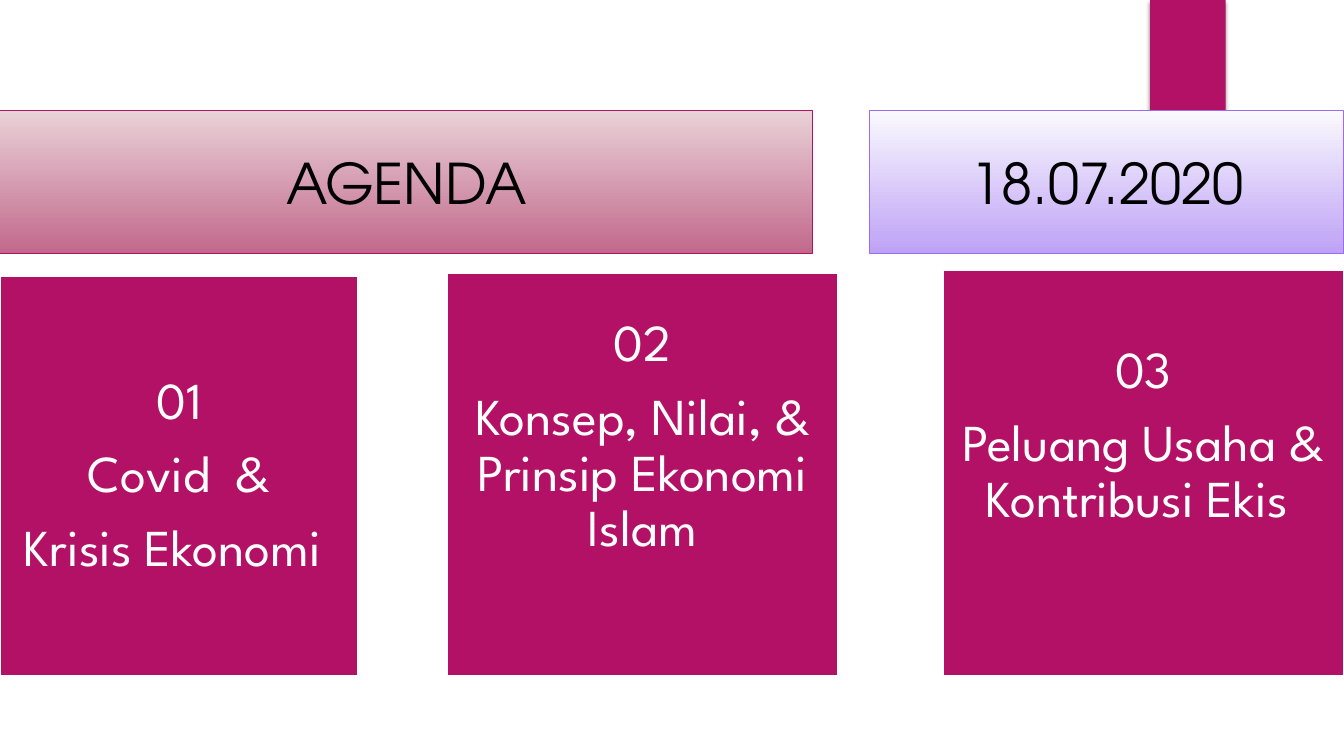
from dataclasses import dataclass

from lxml.etree import SubElement
from pptx import Presentation
from pptx.dml.color import RGBColor
from pptx.enum.shapes import MSO_SHAPE
from pptx.enum.text import MSO_ANCHOR, PP_ALIGN
from pptx.oxml.ns import qn
from pptx.util import Pt


@dataclass(frozen=True)
class Theme:
    magenta: str = "B31166"
    violet: str = "9B6BF2"
    white: str = "FFFFFF"
    black: str = "000000"
    rose_gradient: tuple = ("E9D1D8", "C2698B")
    violet_gradient: tuple = ("FAF9FE", "BEA2F6")
    band_font: str = "TeX Gyre Adventor"
    card_font: str = "League Spartan"
    band_size: float = 40
    card_size: float = 37


class AgendaSlide:
    card_bottom = 483.1
    card_inset = 10.8
    band_top = 79.2
    band_height = 102.2

    def __init__(self, slide, theme):
        self.slide = slide
        self.theme = theme

    def rectangle(self, left, top, width, height):
        shape = self.slide.shapes.add_shape(
            MSO_SHAPE.RECTANGLE, Pt(left), Pt(top), Pt(width), Pt(height))
        shape.shadow.inherit = False
        return shape

    def solid(self, shape, color):
        shape.fill.solid()
        shape.fill.fore_color.rgb = RGBColor.from_string(color)

    def outline(self, shape, color, width):
        shape.line.color.rgb = RGBColor.from_string(color)
        shape.line.width = Pt(width)

    def add_lines(self, shape, lines, font, size, color):
        """Fill the shape with centred paragraphs and return them."""
        frame = shape.text_frame
        frame.word_wrap = True
        frame.vertical_anchor = MSO_ANCHOR.MIDDLE
        for index, line in enumerate(lines):
            paragraph = frame.add_paragraph() if index else frame.paragraphs[0]
            paragraph.alignment = PP_ALIGN.CENTER
            run = paragraph.add_run()
            run.text = line
            run.font.name = font
            run.font.size = Pt(size)
            run.font.color.rgb = RGBColor.from_string(color)
        return frame.paragraphs

    def tab(self, left, width, height):
        """Add the ribbon hanging from the top edge, with a soft shadow."""
        shape = self.rectangle(left, 0, width, height)
        self.solid(shape, self.theme.magenta)
        shape.line.fill.background()
        effects = shape._element.spPr.find(qn("a:effectLst"))
        shadow = SubElement(effects, qn("a:outerShdw"), blurRad=str(Pt(3)),
                            dist=str(Pt(2)), dir="5400000", rotWithShape="0")
        color = SubElement(shadow, qn("a:srgbClr"), val=self.theme.black)
        SubElement(color, qn("a:alpha"), val="45000")

    def card(self, left, top, width, lines, lift=0):
        """Add an agenda card; lift is extra room kept below its text."""
        shape = self.rectangle(left, top, width, self.card_bottom - top)
        self.solid(shape, self.theme.magenta)
        self.outline(shape, self.theme.white, 1.5)
        frame = shape.text_frame
        frame.margin_left = frame.margin_right = frame.margin_top = Pt(self.card_inset)
        frame.margin_bottom = Pt(self.card_inset + lift)
        for paragraph in self.add_lines(shape, lines, self.theme.card_font,
                                        self.theme.card_size, self.theme.white):
            paragraph.line_spacing = 0.9
            paragraph.space_after = Pt(12.5)

    def band(self, left, width, text, gradient, line_color):
        shape = self.rectangle(left, self.band_top, width, self.band_height)
        shape.fill.gradient()
        shape.fill.gradient_angle = 270
        for stop, color in zip(shape.fill.gradient_stops, gradient):
            stop.color.rgb = RGBColor.from_string(color)
        self.outline(shape, line_color, 0.75)
        self.add_lines(shape, [text], self.theme.band_font,
                       self.theme.band_size, self.theme.black)


def main():
    presentation = Presentation()
    presentation.slide_width = Pt(960)
    presentation.slide_height = Pt(540)
    theme = Theme()
    agenda = AgendaSlide(
        presentation.slides.add_slide(presentation.slide_layouts[6]), theme)

    agenda.tab(821.5, 54, 90)
    agenda.card(0, 196.8, 255.6, ["01", "Covid  &", "Krisis Ekonomi "])
    agenda.card(319, 195, 280, ["02", "Konsep, Nilai, & Prinsip Ekonomi Islam"], lift=53)
    agenda.card(673.4, 193, 286.6, ["03", "Peluang Usaha & Kontribusi Ekis "], lift=53)
    agenda.band(0, 580.3, "AGENDA", theme.rose_gradient, theme.magenta)
    agenda.band(621.4, 338.6, "18.07.2020", theme.violet_gradient, theme.violet)

    presentation.save("out.pptx")


if __name__ == "__main__":
    main()
